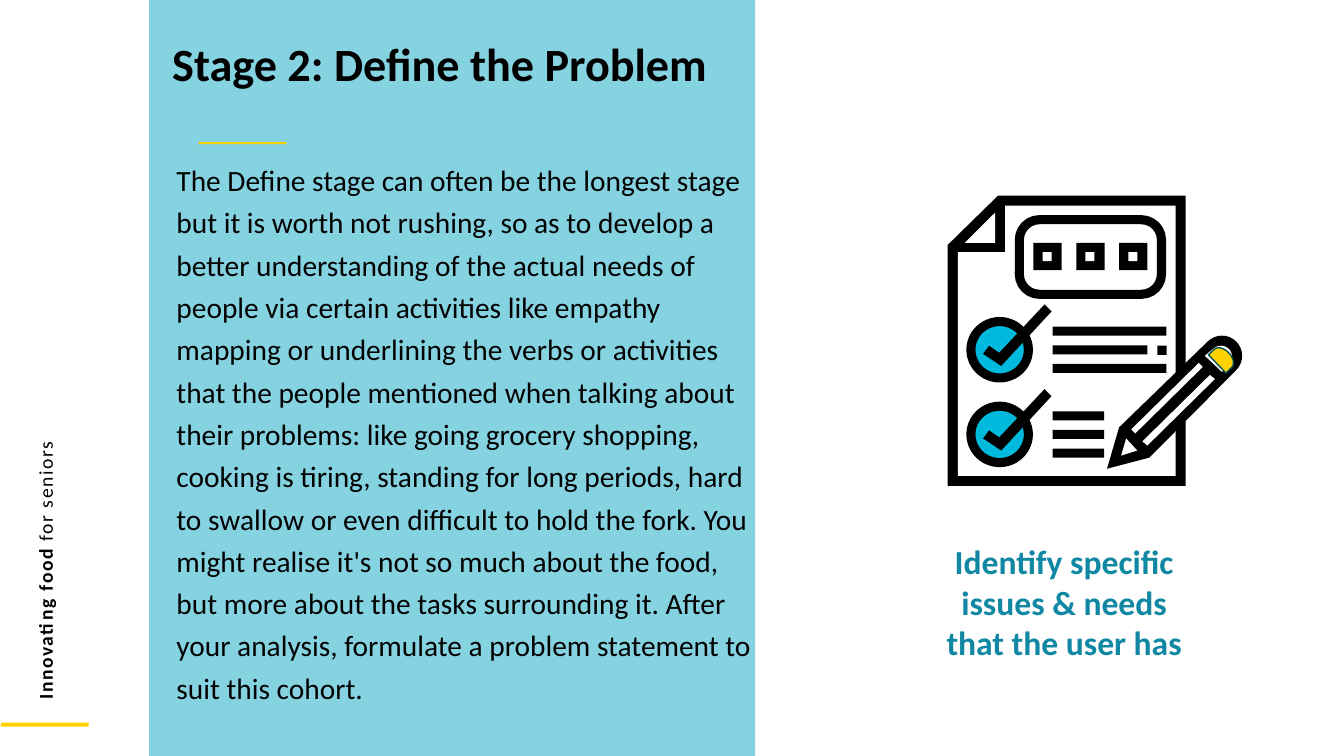
"""Build the "Define the Problem" slide with its checklist icon."""
import math

import pptx
import pptx.dml.color
import pptx.enum.shapes
import pptx.enum.text
import pptx.util

Inches = pptx.util.Inches
Pt = pptx.util.Pt
SHAPE = pptx.enum.shapes.MSO_SHAPE
ALIGN = pptx.enum.text.PP_ALIGN

BLACK, WHITE, YELLOW = "000000", "FFFFFF", "FFD100"
PANEL, CHECK, TEAL, INK = "85D2E1", "00BADE", "1188A3", "030303"
STROKE = 0.09


def colour(value):
    return pptx.dml.color.RGBColor.from_string(value)


def arc(x, y, radius, start, end, steps=16):
    angles = [math.radians(start + (end - start) * i / steps) for i in range(steps + 1)]
    return [(x + radius * math.cos(a), y + radius * math.sin(a)) for a in angles]


class SlideBuilder:
    """Holds the slide style and the current page."""

    font = "Calibri"

    def __init__(self, page):
        self.page = page

    def paint(self, shape, fill=None, line=None, width=0):
        shape.shadow.inherit = False
        if fill:
            shape.fill.solid()
            shape.fill.fore_color.rgb = colour(fill)
        else:
            shape.fill.background()
        if line:
            shape.line.color.rgb = colour(line)
            shape.line.width = width
        else:
            shape.line.fill.background()
        return shape

    def shape(self, kind, left, top, width, height, fill=None, line=None, weight=0):
        shape = self.page.shapes.add_shape(
            kind, Inches(left), Inches(top), Inches(width), Inches(height))
        return self.paint(shape, fill, line, weight)

    def bar(self, left, top, width, height, fill=BLACK):
        return self.shape(SHAPE.RECTANGLE, left, top, width, height, fill)

    def outline(self, points, fill=BLACK):
        points = [(Inches(x), Inches(y)) for x, y in points]
        builder = self.page.shapes.build_freeform(*points[0], scale=1.0)
        builder.add_line_segments(points[1:], close=True)
        return self.paint(builder.convert_to_shape(), fill)

    def text(self, place, paragraphs, size, fill=BLACK, align=ALIGN.LEFT,
             spacing=1.0, inset=0.1, rotation=0, tracking=0):
        box = self.page.shapes.add_textbox(*(Inches(value) for value in place))
        box.rotation = rotation
        frame = box.text_frame
        frame.word_wrap = True
        frame.margin_left = Inches(inset)
        for index, spans in enumerate(paragraphs):
            para = frame.add_paragraph() if index else frame.paragraphs[0]
            para.alignment = align
            para.line_spacing = spacing
            for words, bold in spans:
                span = para.add_run()
                span.text = words
                span.font.name = self.font
                span.font.size = Pt(size)
                span.font.bold = bold
                span.font.color.rgb = colour(fill)
                if tracking:
                    span.font._element.set("spc", str(tracking))

    def paper(self):
        self.outline([(9.9, 1.94), (11.76, 1.94), (11.76, 4.82), (9.4, 4.82), (9.4, 2.43)])
        self.outline([(9.97, 2.04), (11.66, 2.04), (11.66, 4.72), (9.5, 4.72),
                      (9.5, 2.5), (9.97, 2.5)], WHITE)
        self.outline([(9.57, 2.41), (9.87, 2.11), (9.87, 2.41)], WHITE)
        frame = self.shape(SHAPE.ROUNDED_RECTANGLE, 10.11, 2.18, 1.41, 0.74,
                           line=BLACK, weight=Inches(STROKE))
        frame.adjustments[0] = 0.27
        for column in range(3):
            left = 10.25 + 0.425 * column
            self.bar(left, 2.41, 0.28, 0.27)
            self.bar(left + STROKE, 2.41 + STROKE, STROKE, STROKE, WHITE)

    def checks(self):
        tick = [(9.75, 3.51), (9.81, 3.43), (9.91, 3.5), (10.36, 3.02), (10.43, 3.09), (9.93, 3.63)]
        for top, widths in ((3.24, (1.13, 0.94, 1.13)), (4.08, (0.51, 0.51, 0.51))):
            drop = top - 3.24
            self.shape(SHAPE.OVAL, 9.63, 3.19 + drop, 0.57, 0.56, CHECK, BLACK, Inches(STROKE))
            self.outline([(x, y + drop) for x, y in tick])
            for row, width in enumerate(widths):
                self.bar(10.44, top + 0.185 * row, width, STROKE)
        self.bar(11.48, 3.43, STROKE, STROKE)

    def pencil(self):
        self.outline([(10.98, 4.65), (11.1, 4.24), *arc(12.12, 3.53, 0.2, -135, 45),
                      (11.4, 4.54)])
        self.outline([(11.22, 4.26), (11.89, 3.6), (11.93, 3.64), (11.26, 4.3)], WHITE)
        self.outline([(11.33, 4.38), (12, 3.72), (12.05, 3.76), (11.38, 4.42)], WHITE)
        self.outline([(11.17, 4.35), (11.28, 4.47), (11.12, 4.52)], WHITE)
        self.outline([(11.95, 3.53), *arc(12.11, 3.54, 0.11, -135, 45), (12.12, 3.69)], WHITE)
        eraser = self.shape(SHAPE.FLOWCHART_DELAY, 12.05, 3.43, 0.16, 0.25,
                            YELLOW, "065151", Pt(1))
        eraser.rotation = 316.1


def main():
    deck = pptx.Presentation()
    deck.slide_width, deck.slide_height = Inches(13.33), Inches(7.5)
    slide = SlideBuilder(deck.slides.add_slide(deck.slide_layouts[6]))
    slide.bar(1.48, 0, 6.01, 7.5, PANEL)
    slide.bar(0.01, 7.17, 0.87, 0.04, YELLOW)
    slide.bar(1.97, 1.41, 0.87, 0.02, YELLOW)
    slide.text((-3.32, 3.1, 7.54, 0.34), [[("Innovating food ", True), ("for seniors", False)]],
               14, rotation=270, tracking=110)
    body = (
        "The Define stage can often be the longest stage but it is worth not rushing, so as to "
        "develop a better understanding of the actual needs of people via certain activities "
        "like empathy mapping or underlining the verbs or activities that the people mentioned "
        "when talking about their problems: like going grocery shopping, cooking is tiring, "
        "standing for long periods, hard to swallow or even difficult to hold the fork. You "
        "might realise it's not so much about the food, but more about the tasks surrounding "
        "it. After your analysis, formulate a problem statement to suit this cohort.")
    slide.text((1.4, 1.49, 6.29, 6.01), [[(body, False)]], 21, INK, spacing=1.2, inset=0.35)
    slide.text((1.61, 0.36, 5.58, 0.9), [[("Stage 2: Define the Problem", True)]], 33, spacing=0.9)
    slide.paper()
    slide.checks()
    slide.pencil()
    caption = ("Identify specific", "issues & needs", "that the user has")
    slide.text((8.44, 5.32, 4.23, 1.31), [[(line, True)] for line in caption],
               24, TEAL, ALIGN.CENTER)
    deck.save("out.pptx")


if __name__ == "__main__":
    main()
